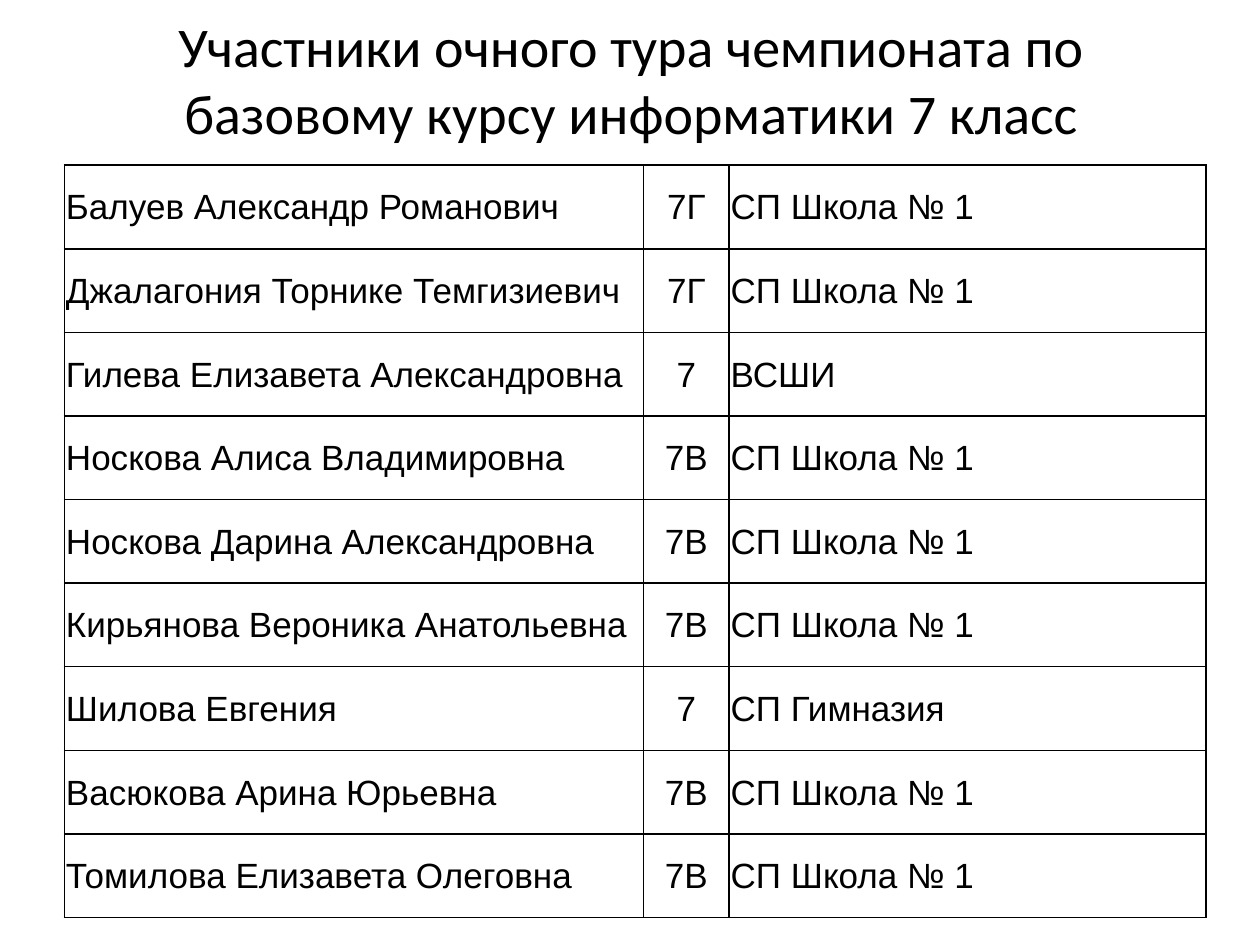
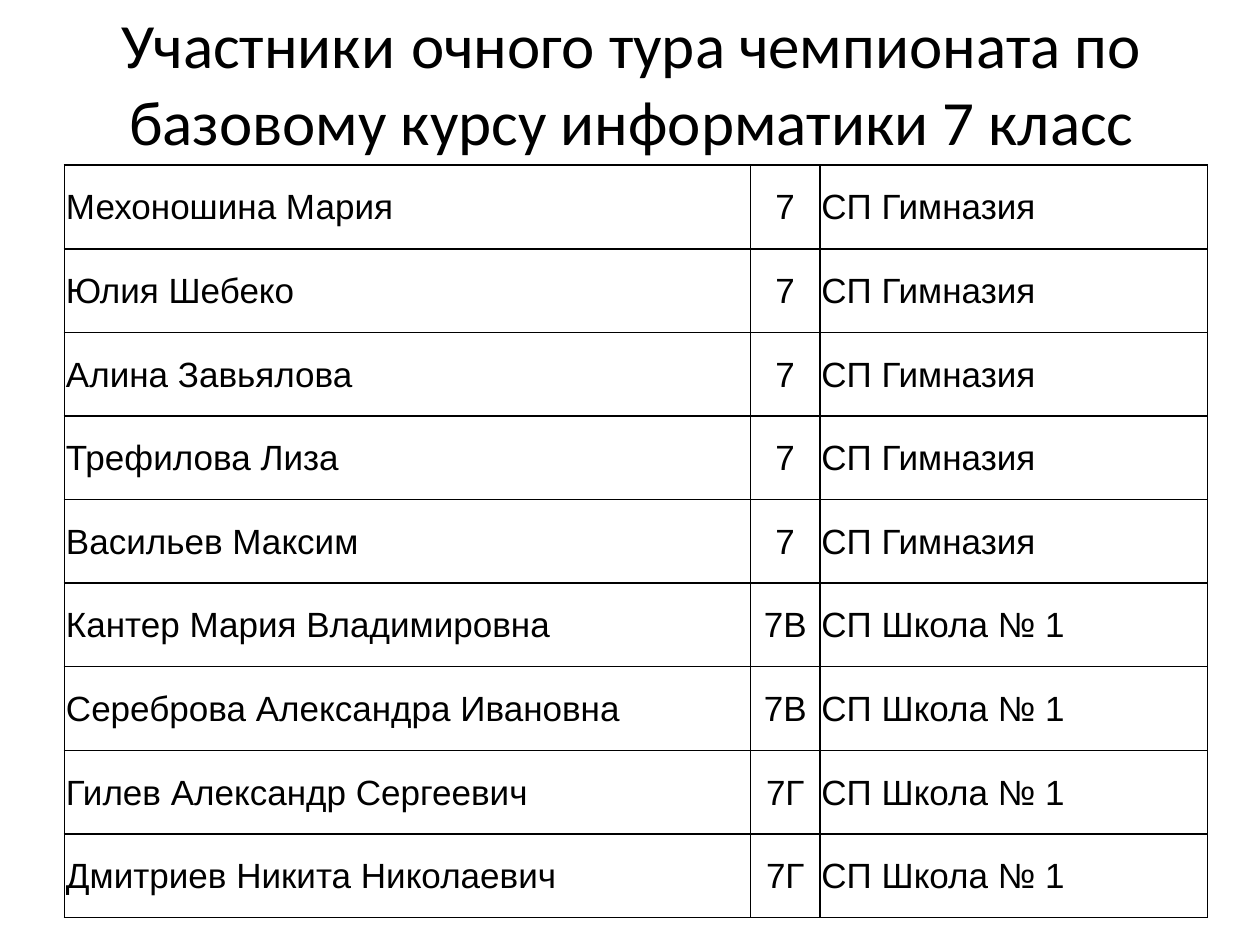
"""Two slides listing the participants of the grade 7 informatics championship."""
from lxml import etree
from pptx import Presentation
from pptx.dml.color import RGBColor
from pptx.enum import text
from pptx.oxml import ns
from pptx.util import Cm, Pt

BLACK, WHITE = "000000", "FFFFFF"
TITLE_START = "Участники"
TITLE_REST = "очного тура чемпионата по базовому курсу информатики 7 класс"
LEFT = Cm(1.3)
SCHOOL, GYMNASIUM = "СП Школа № 1", "СП Гимназия"
BORDER_WIDTH = Pt(1)

slides = [
    {
        "title_size": 32,
        "space_size": 32,
        "column_widths": (11.67, 1.73, 9.61),
        "participants": [
            ("Балуев Александр Романович", "7Г", SCHOOL),
            ("Джалагония Торнике Темгизиевич", "7Г", SCHOOL),
            ("Гилева Елизавета Александровна", "7", "ВСШИ"),
            ("Носкова Алиса Владимировна", "7В", SCHOOL),
            ("Носкова Дарина Александровна", "7В", SCHOOL),
            ("Кирьянова Вероника Анатольевна", "7В", SCHOOL),
            ("Шилова Евгения", "7", GYMNASIUM),
            ("Васюкова Арина Юрьевна", "7В", SCHOOL),
            ("Томилова Елизавета Олеговна", "7В", SCHOOL),
        ],
    },
    {
        "title_size": 36,
        "space_size": 39.6,
        "column_widths": (13.83, 1.4, 7.81),
        "participants": [
            ("Мехоношина Мария", "7", GYMNASIUM),
            ("Юлия Шебеко", "7", GYMNASIUM),
            ("Алина Завьялова", "7", GYMNASIUM),
            ("Трефилова Лиза", "7", GYMNASIUM),
            ("Васильев Максим", "7", GYMNASIUM),
            ("Кантер Мария Владимировна", "7В", SCHOOL),
            ("Сереброва Александра Ивановна", "7В", SCHOOL),
            ("Гилев Александр Сергеевич", "7Г", SCHOOL),
            ("Дмитриев Никита Николаевич", "7Г", SCHOOL),
        ],
    },
]


def color(value):
    return RGBColor.from_string(value)


def add_borders(cell):
    properties = cell._tc.get_or_add_tcPr()
    for position, side in enumerate(("lnL", "lnR", "lnT", "lnB")):
        line = etree.Element(ns.qn(f"a:{side}"), w=str(BORDER_WIDTH))
        fill = etree.SubElement(line, ns.qn("a:solidFill"))
        etree.SubElement(fill, ns.qn("a:srgbClr"), val=BLACK)
        properties.insert(position, line)


presentation = Presentation()
presentation.slide_width, presentation.slide_height = Cm(25.4), Cm(19.05)

for content in slides:
    slide = presentation.slides.add_slide(presentation.slide_layouts[6])
    slide.background.fill.solid()
    slide.background.fill.fore_color.rgb = color(WHITE)

    title = slide.shapes.add_textbox(LEFT, 0, Cm(22.86), Cm(3.18)).text_frame
    title.word_wrap = True
    title.vertical_anchor = text.MSO_ANCHOR.MIDDLE
    paragraph = title.paragraphs[0]
    paragraph.alignment = text.PP_ALIGN.CENTER
    paragraph.font.name = "Calibri"
    paragraph.font.color.rgb = color(BLACK)
    title_size, space_size = content["title_size"], content["space_size"]
    for words, size in ((TITLE_START, title_size), (" ", space_size), (TITLE_REST, title_size)):
        run = paragraph.add_run()
        run.text = words
        run.font.size = Pt(size)

    participants, widths = content["participants"], content["column_widths"]
    table = slide.shapes.add_table(
        len(participants), len(widths), LEFT, Cm(3.33), Cm(sum(widths)), Cm(15.17)
    ).table
    table.first_row = table.horz_banding = False
    for column, width in zip(table.columns, widths):
        column.width = Cm(width)

    for row_index, participant in enumerate(participants):
        for column_index, value in enumerate(participant):
            cell = table.cell(row_index, column_index)
            cell.text = value
            cell.vertical_anchor = text.MSO_ANCHOR.MIDDLE
            cell.margin_left = cell.margin_right = cell.margin_top = Cm(0.03)
            cell.margin_bottom = 0
            cell.fill.background()
            add_borders(cell)
            paragraph = cell.text_frame.paragraphs[0]
            paragraph.alignment = text.PP_ALIGN.CENTER if column_index == 1 else text.PP_ALIGN.LEFT
            paragraph.font.name = "Arial"
            paragraph.font.size = Pt(20)
            paragraph.font.color.rgb = color(BLACK)

presentation.save("out.pptx")
